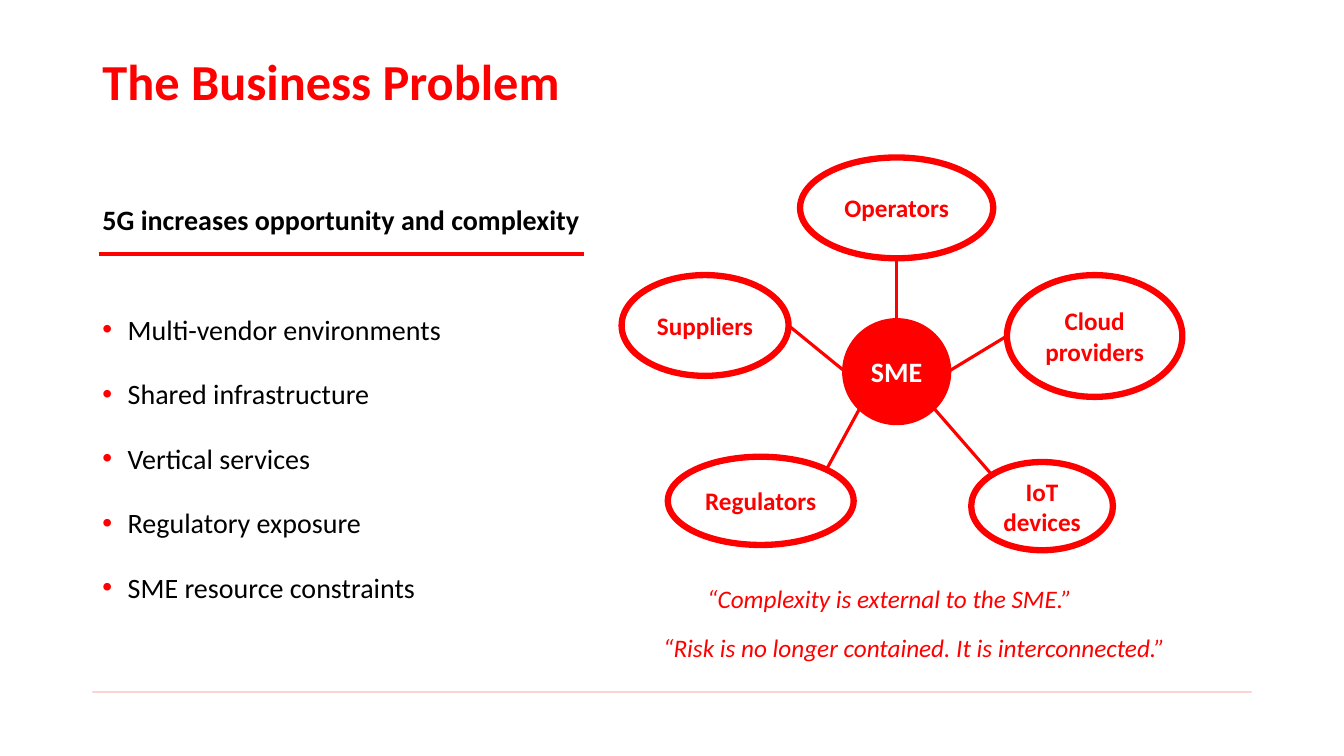
import math
from lxml import etree
from pptx import Presentation
from pptx import util as u
from pptx.dml.color import RGBColor
from pptx.enum import shapes, text
from pptx.oxml import ns

PX = 9525
RED, BLACK, WHITE = "FF0000", "000000", "FFFFFF"
FONT = "Calibri"

TITLE = ("The Business Problem", (88, 38, 1104, 84))
BODY_AREA = (88, 192, 517, 457)
HEADING = "5G increases opportunity and complexity"
BULLETS = [
    "Multi-vendor environments",
    "Shared infrastructure",
    "Vertical services",
    "Regulatory exposure",
    "SME resource constraints",
]
HUB = ("SME", (805, 306, 98, 96))
PARTNERS = [
    ("IoT devices", (925, 440, 135, 84), (1, 1)),
    ("Regulators", (636, 435, 177, 84), (-1, 1)),
    ("Cloud providers", (959, 262, 167, 116), (1, 0)),
    ("Suppliers", (592, 262, 159, 96), (-1, 0)),
    ("Operators", (762, 150, 184, 96), (0, -1)),
]
QUOTES = [
    ("“Complexity is external to the SME.”", (664, 551, 381, 38)),
    ("“Risk is no longer contained. It is interconnected.”", (622, 597, 534, 38)),
]
HEADING_RULE = ((94, 242), (556, 242))
FOOTER_RULE = ((88, 659), (1192, 659))


def px(*values):
    return [u.Emu(round(value * PX)) for value in values]


def color(value):
    return RGBColor.from_string(value)


def style(font, size, ink, **flags):
    values = {"name": FONT, "size": u.Pt(size), **flags}
    for name, value in values.items():
        setattr(font, name, value)
    font.color.rgb = color(ink)


def place(box, area):
    for name, value in zip(("left", "top", "width", "height"), px(*area)):
        setattr(box, name, value)


def add_line(start, end, width=2.25, opacity=None):
    line = page.shapes.add_connector(shapes.MSO_CONNECTOR.STRAIGHT, *px(*start, *end))
    line.line.color.rgb = color(RED)
    line.line.width = u.Pt(width)
    etree.SubElement(line._element.spPr, ns.qn("a:effectLst"))
    if opacity:
        fill = line._element.spPr.find(".//" + ns.qn("a:srgbClr"))
        etree.SubElement(fill, ns.qn("a:alpha"), val=str(opacity * 1000))


def add_node(label, area, fill, ink, size):
    node = page.shapes.add_shape(shapes.MSO_SHAPE.FLOWCHART_CONNECTOR, *px(*area))
    node.shadow.inherit = False
    node.fill.solid()
    node.fill.fore_color.rgb = color(fill)
    node.line.color.rgb = color(RED)
    node.line.width = u.Pt(4.5)
    frame = node.text_frame
    frame.word_wrap = True
    frame.vertical_anchor = text.MSO_ANCHOR.MIDDLE
    para = frame.paragraphs[0]
    para.text = label
    para.alignment = text.PP_ALIGN.CENTER
    style(para.font, size, ink, bold=True)


def rim(area, direction):
    left, top, width, height = area
    dx, dy = direction
    reach = 2 * math.hypot(dx, dy)
    return left + width / 2 + width * dx / reach, top + height / 2 + height * dy / reach


def add_body_line(frame, index, label):
    para = frame.paragraphs[0] if index == 0 else frame.add_paragraph()
    para.text = label
    para.alignment = text.PP_ALIGN.LEFT
    para.line_spacing = 1.5 if index else 0.9
    para.space_before = u.Pt((0, 42)[index] if index < 2 else 10)
    props = para._p.get_or_add_pPr()
    props.set("marL", str(24 * PX))
    props.set("indent", str(-24 * PX))
    if index:
        tint = etree.SubElement(props, ns.qn("a:buClr"))
        etree.SubElement(tint, ns.qn("a:srgbClr"), val=RED)
        etree.SubElement(props, ns.qn("a:buFont"), typeface="Arial")
        etree.SubElement(props, ns.qn("a:buChar"), char="•")
    else:
        etree.SubElement(props, ns.qn("a:buNone"))
    style(para.font, 20, BLACK, bold=index == 0)


deck = Presentation()
deck.slide_width, deck.slide_height = px(1280, 720)
page = deck.slides.add_slide(deck.slide_layouts[1])

add_line(*FOOTER_RULE, width=0.62, opacity=50)

title = page.shapes.title
place(title, TITLE[1])
title.text_frame.vertical_anchor = text.MSO_ANCHOR.MIDDLE
para = title.text_frame.paragraphs[0]
para.text = TITLE[0]
para.alignment = text.PP_ALIGN.LEFT
para.line_spacing = 0.9
style(para.font, 36, RED, bold=True)

body = page.placeholders[1]
place(body, BODY_AREA)
body.text_frame.auto_size = text.MSO_AUTO_SIZE.NONE
for index, label in enumerate([HEADING, *BULLETS]):
    add_body_line(body.text_frame, index, label)

add_node(*HUB, RED, WHITE, 20)
for label, area, (dx, dy) in PARTNERS:
    add_node(label, area, WHITE, RED, 18)
    add_line(rim(area, (-dx, -dy)), rim(HUB[1], (dx, dy)))

for label, area in QUOTES:
    box = page.shapes.add_textbox(*px(*area))
    box.text_frame.word_wrap = True
    para = box.text_frame.paragraphs[0]
    para.text = label
    style(para.font, 18, RED, italic=True)

add_line(*HEADING_RULE)

deck.save("out.pptx")
